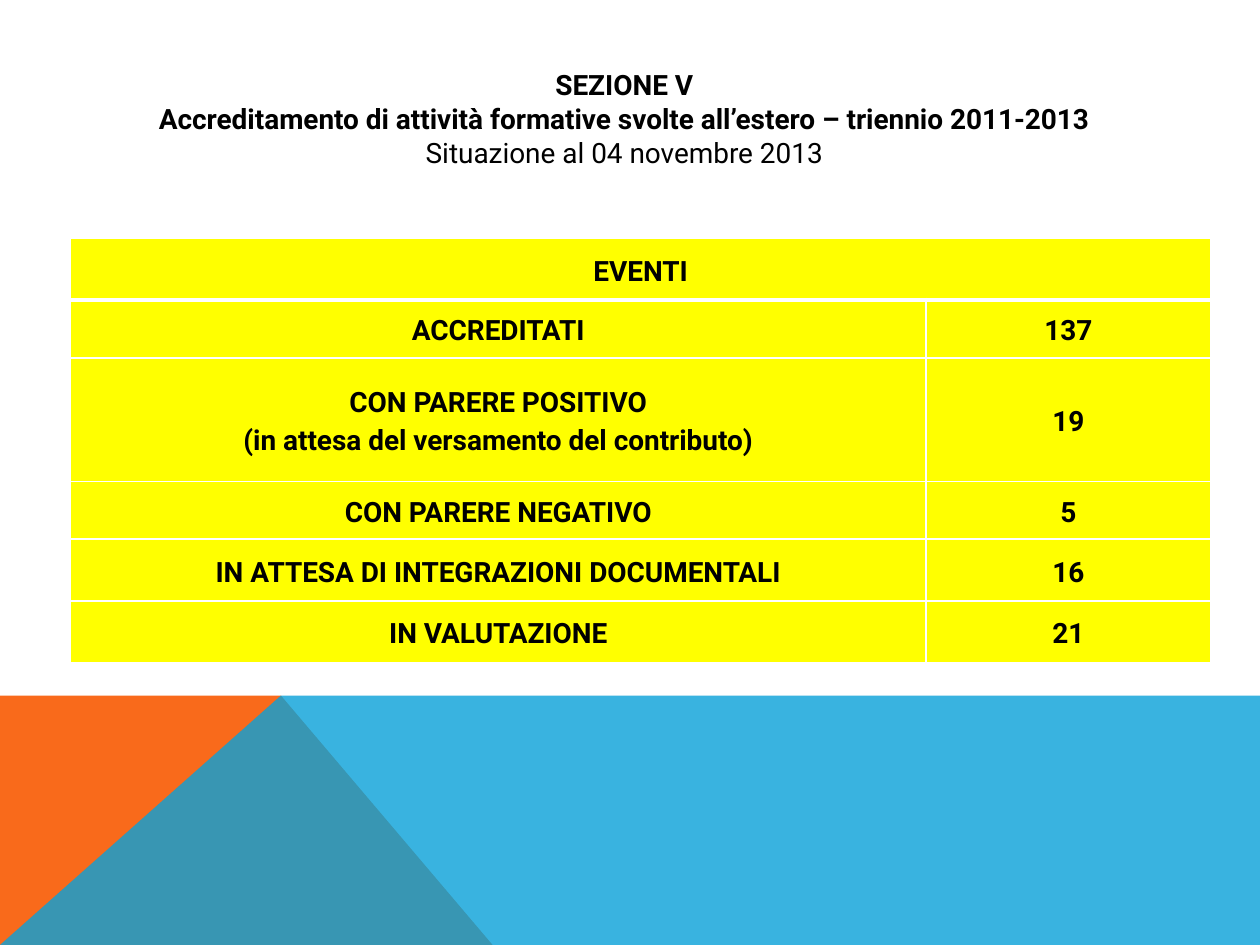
from dataclasses import dataclass
from lxml.etree import SubElement
from pptx import Presentation
from pptx.dml.color import RGBColor
from pptx.enum.text import MSO_ANCHOR as ANCHOR, PP_ALIGN as ALIGN
from pptx.oxml import parse_xml
from pptx.oxml.ns import nsdecls, qn
from pptx.util import Inches, Pt

COLORS = {"text": "000000", "cell": "FFFF00", "border": "FFFFFF",
          "orange": "F96A1B", "blue": "08A1D9"}


def rgb(name):
    return RGBColor.from_string(COLORS[name])


def write_text(tf, lines, *, font, size, bold=(), spacing=None):
    for i, line in enumerate(lines):
        p = tf.paragraphs[0] if i == 0 else tf.add_paragraph()
        p.alignment = ALIGN.CENTER
        if spacing:
            p.line_spacing = spacing
        r = p.add_run()
        r.text = line
        r.font.name, r.font.size = font, Pt(size)
        r.font.bold = i in bold
        r.font.color.rgb = rgb("text")


@dataclass
class SlideBuilder:
    """Holds the text style and the slide being built."""
    s: object
    font: str = "Roboto"
    size: int = 16

    def polygon(self, points, color, alpha=None):
        pts = [(Inches(x), Inches(y)) for x, y in points]
        fb = self.s.shapes.build_freeform(*pts[0])
        fb.add_line_segments(pts[1:], close=True)
        sp = fb.convert_to_shape()
        sp.shadow.inherit = False
        sp.fill.solid()
        sp.fill.fore_color.rgb = rgb(color)
        sp.line.fill.background()
        if alpha:
            clr = sp.fill._xPr.find(qn("a:solidFill"))[0]
            SubElement(clr, qn("a:alpha")).set("val", str(alpha * 1000))

    def text(self, box, lines, bold):
        tf = self.s.shapes.add_textbox(*map(Inches, box)).text_frame
        tf.word_wrap = True
        tf.vertical_anchor = ANCHOR.TOP
        write_text(tf, lines, font=self.font, size=self.size, bold=bold)

    def cell(self, cell, lines, top=1, bottom=1):
        cell.fill.solid()
        cell.fill.fore_color.rgb = rgb("cell")
        cell.vertical_anchor = ANCHOR.MIDDLE
        cell.margin_left = cell.margin_right = Inches(0.07)
        cell.margin_top = cell.margin_bottom = 0
        if lines:
            write_text(cell.text_frame, lines, font=self.font, size=self.size,
                       bold=range(len(lines)), spacing=1.15)
        sides = (("L", 1), ("R", 1), ("T", top), ("B", bottom))
        for i, (side, width) in enumerate(sides):
            cell._tc.get_or_add_tcPr().insert(i, parse_xml(
                f'<a:ln{side} {nsdecls("a")} w="{Pt(width)}"><a:solidFill>'
                f'<a:srgbClr val="{COLORS["border"]}"/></a:solidFill></a:ln{side}>'))

    def table(self, left, top, widths, heights, rows):
        box = map(Inches, (left, top, sum(widths), sum(heights)))
        table = self.s.shapes.add_table(len(rows), len(widths), *box).table
        table.horz_banding = False
        for col, width in zip(table.columns, widths):
            col.width = Inches(width)
        for i, (height, row) in enumerate(zip(heights, rows)):
            table.rows[i].height = Inches(height)
            for j, lines in enumerate(row):
                self.cell(table.cell(i, j), lines, top=3 if i == 1 else 1,
                          bottom=3 if i == 0 else 1)
        table.cell(0, 0).merge(table.cell(0, len(widths) - 1))


def main():
    prs = Presentation()
    prs.slide_width, prs.slide_height = Inches(10), Inches(7.5)
    slide = SlideBuilder(prs.slides.add_slide(prs.slide_layouts[6]))

    top, bottom, peak = 5.52, 7.5, (2.23, 5.52)
    slide.polygon([(0, bottom), (0, top), peak, (3.91, bottom)], "orange")
    slide.polygon([(0, bottom), peak, (10, top), (10, bottom)], "blue", alpha=80)

    slide.table(0.56, 1.89, (6.79, 2.26), (0.49, 0.46, 0.98, 0.46, 0.49, 0.49), [
        (["EVENTI"], []),
        (["ACCREDITATI"], ["137"]),
        (["CON PARERE POSITIVO", "(in attesa del versamento del contributo)"], ["19"]),
        (["CON PARERE NEGATIVO"], ["5"]),
        (["IN ATTESA DI INTEGRAZIONI DOCUMENTALI"], ["16"]),
        (["IN VALUTAZIONE"], ["21"]),
    ])
    slide.text((0.56, 0.49, 8.79, 1.21), [
        "SEZIONE V",
        "Accreditamento di attività formative svolte all’estero – triennio 2011-2013",
        "Situazione al 04 novembre 2013",
    ], bold=(0, 1))
    prs.save("out.pptx")


if __name__ == "__main__":
    main()
